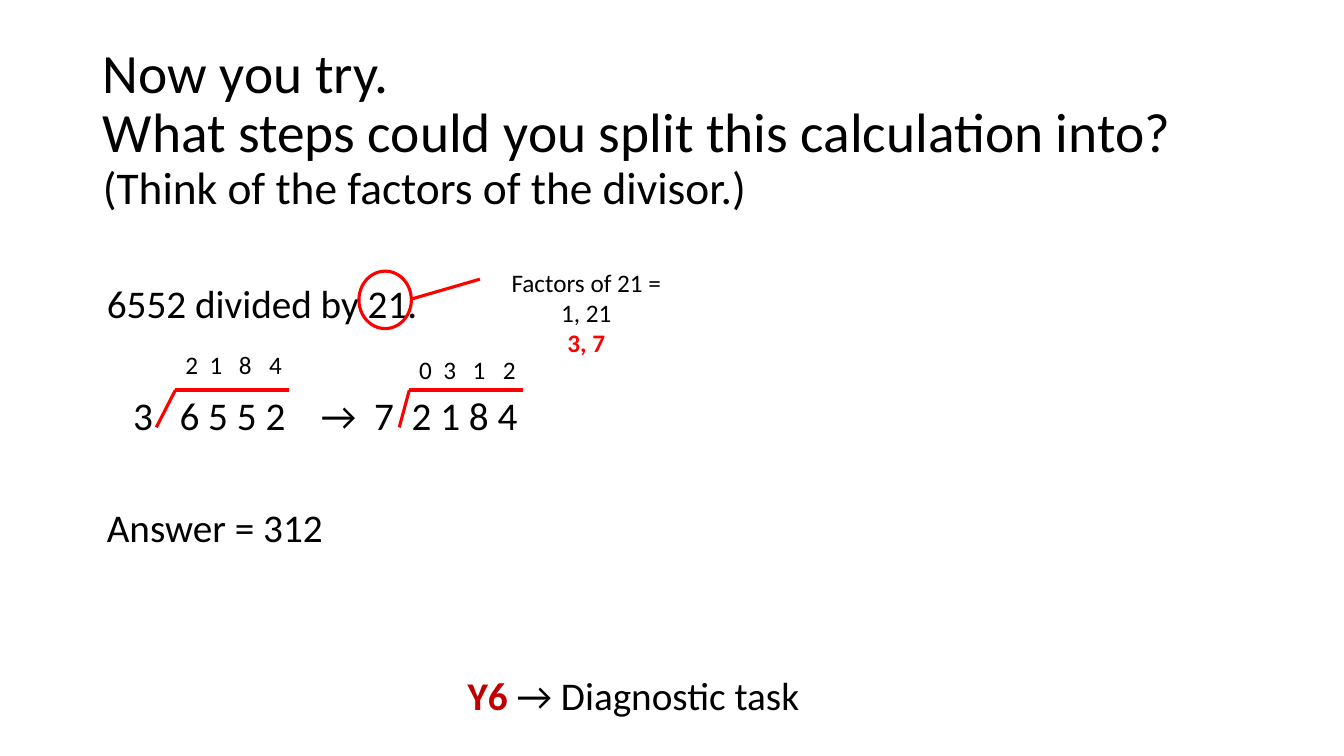
import pptx
import pptx.util
import pptx.dml.color
import pptx.enum.shapes
import pptx.enum.text
import pptx.oxml.ns
import lxml.etree

Inches, Pt = pptx.util.Inches, pptx.util.Pt
ALIGN = pptx.enum.text.PP_ALIGN
ANCHOR = pptx.enum.text.MSO_ANCHOR
BLACK, RED, DARK_RED = "000000", "FF0000", "C00000"
qn = pptx.oxml.ns.qn


def rgb(value):
    return pptx.dml.color.RGBColor.from_string(value)


def add_text(p, text, size=28, color=BLACK, bold=False, spacing=0):
    """Add a run; spacing is the extra width of each character in points."""
    r = p.add_run()
    r.text = text
    r.font.name = "Calibri"
    r.font.size = Pt(size)
    r.font.bold = bold
    r.font.color.rgb = rgb(color)
    if spacing:
        r._r.get_or_add_rPr().set("spc", str(round(spacing * 100)))


def set_tabs(p, stops):
    """Add left tab stops, in inches from the start of the text."""
    tabs = lxml.etree.SubElement(p._p.get_or_add_pPr(), qn("a:tabLst"))
    for stop in stops:
        lxml.etree.SubElement(tabs, qn("a:tab"), pos=str(Inches(stop)), algn="l")


def place(sp, left, top, width, height, anchor=ANCHOR.TOP):
    sp.left, sp.top = Inches(left), Inches(top)
    sp.width, sp.height = Inches(width), Inches(height)
    tf = sp.text_frame
    tf.word_wrap = True
    tf.auto_size = pptx.enum.text.MSO_AUTO_SIZE.NONE
    tf.vertical_anchor = anchor
    return tf


def add_box(s, left, top, width, height):
    sp = s.shapes.add_textbox(0, 0, 0, 0)
    return place(sp, left, top, width, height)


def add_line(s, x1, y1, x2, y2):
    line = s.shapes.add_connector(
        pptx.enum.shapes.MSO_CONNECTOR.STRAIGHT,
        Inches(x1), Inches(y1), Inches(x2), Inches(y2))
    line.line.color.rgb = rgb(RED)
    line.line.width = Pt(2.25)
    lxml.etree.SubElement(line._element.spPr, qn("a:effectLst"))


def add_title(s, left, top, width, height):
    tf = place(s.shapes.title, left, top, width, height, ANCHOR.MIDDLE)
    p = tf.paragraphs[0]
    p.alignment = ALIGN.LEFT
    p.line_spacing = 0.9
    add_text(p, "Now you try.", size=39.6)
    p.add_line_break()
    add_text(p, "What steps could you split this calculation into? ", size=39.6)
    add_text(p, "(Think of the factors of the divisor.)", size=32.4)


def add_working(s, left, top, width, height):
    """Fill the body; each row gives its space before, indent and parts.

    A part is a text and the extra width of the space after it.
    """
    tf = place(s.placeholders[1], left, top, width, height)
    rows = [(10, 0, [("6552 divided by 21.", 0)]),
            (50, 0.26, [("3", 12.67), ("6 5 5 2", 19), ("→", 6.33),
                        ("7", 6.33), ("2 1 8 4", 0)]),
            (50, 0, [("Answer = 312", 0)])]
    for i, (before, indent, parts) in enumerate(rows):
        p = tf.paragraphs[0] if i == 0 else tf.add_paragraph()
        p.line_spacing = 0.9
        p.space_before = Pt(before)
        pPr = p._p.get_or_add_pPr()
        pPr.set("marL", str(Inches(indent)))
        pPr.set("indent", "0")
        lxml.etree.SubElement(pPr, qn("a:buNone"))
        for text, gap in parts:
            add_text(p, text)
            if gap:
                add_text(p, " ", spacing=gap)


def add_factors(s, left, top, width, height):
    """Ring the divisor and list its factors beside it."""
    ring = s.shapes.add_shape(
        pptx.enum.shapes.MSO_SHAPE.OVAL, Inches(left), Inches(top),
        Inches(0.52), Inches(0.57))
    ring.shadow.inherit = False
    ring.fill.background()
    ring.line.color.rgb = rgb(RED)
    ring.line.width = Pt(2.25)
    add_line(s, left + 0.51, top + 0.28, left + 1.2, top + 0.08)
    tf = add_box(s, left + 1.36, top - 0.09, width - 1.36, height)
    rows = [("Factors of 21 =", BLACK), ("1, 21", BLACK), ("3, 7", RED)]
    for i, (text, color) in enumerate(rows):
        p = tf.paragraphs[0] if i == 0 else tf.add_paragraph()
        p.alignment = ALIGN.CENTER
        add_text(p, text, size=18, color=color, bold=color == RED)


def add_division(s, left, top, slant, rise, quotient):
    """Draw a division bracket with its quotient digits above the bar."""
    add_line(s, left - slant, top + 0.37, left, top)
    add_line(s, left, top, left + 1.13, top)
    p = add_box(s, left, top - rise, 1.4, 0.4).paragraphs[0]
    set_tabs(p, [0.24, 0.53, 0.83])
    add_text(p, "\t".join(quotient), size=18)


def add_task(s, left, top, width, height):
    p = add_box(s, left, top, width, height).paragraphs[0]
    add_text(p, "Y6 ", color=DARK_RED, bold=True)
    add_text(p, "→ Diagnostic task")


def main():
    prs = pptx.Presentation()
    prs.slide_width, prs.slide_height = Inches(13.33), Inches(7.5)
    s = prs.slides.add_slide(prs.slide_layouts[1])
    add_title(s, 0.92, 0.4, 11.5, 1.77)
    add_working(s, 0.96, 2.77, 11.5, 3.99)
    add_factors(s, 3.56, 2.69, 3.15, 1.01)
    add_division(s, 1.74, 3.87, 0.19, 0.45, "2184")
    add_division(s, 4.06, 3.87, 0.1, 0.4, "0312")
    add_task(s, 4.54, 6.61, 3.56, 0.57)
    prs.save("out.pptx")


if __name__ == "__main__":
    main()
